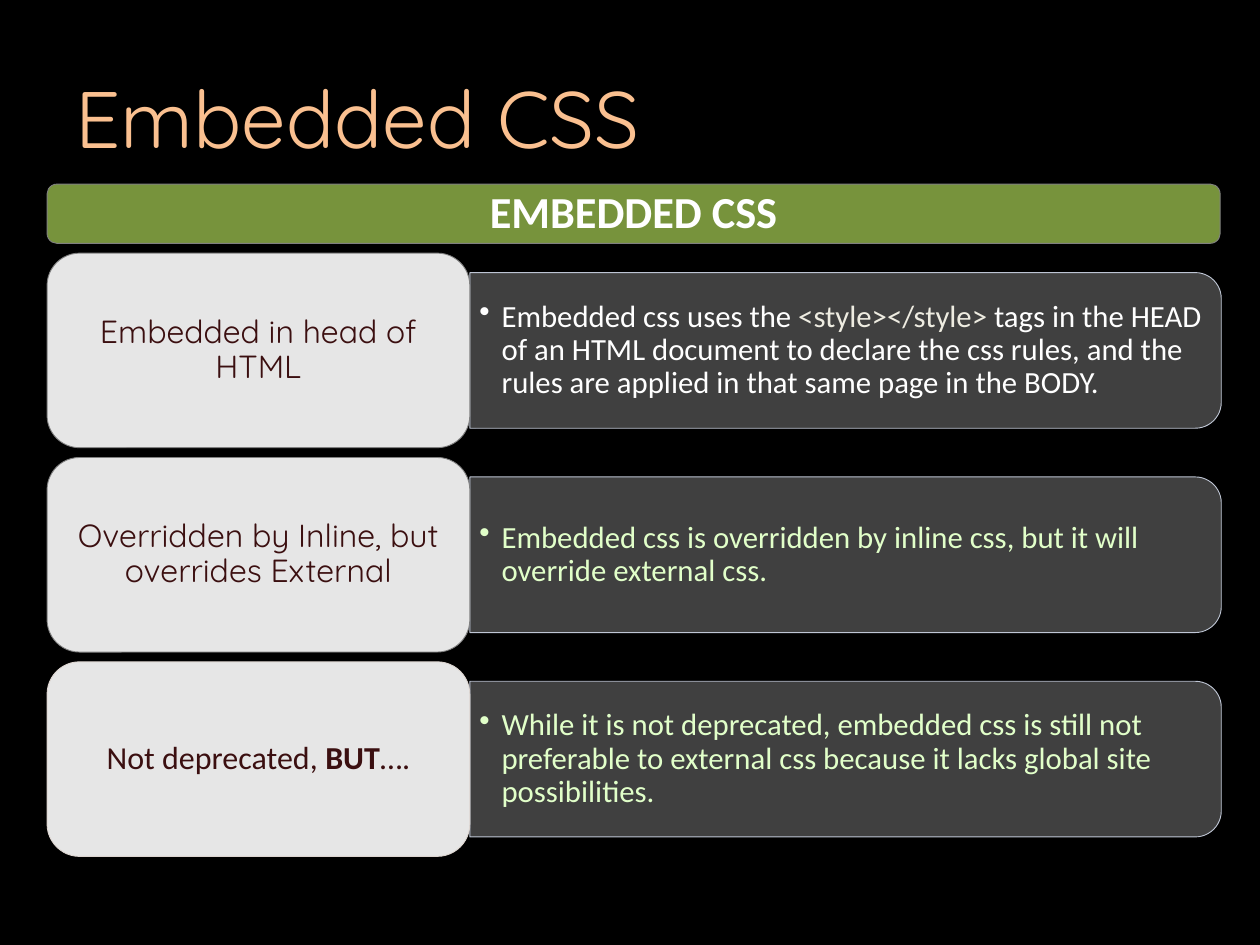
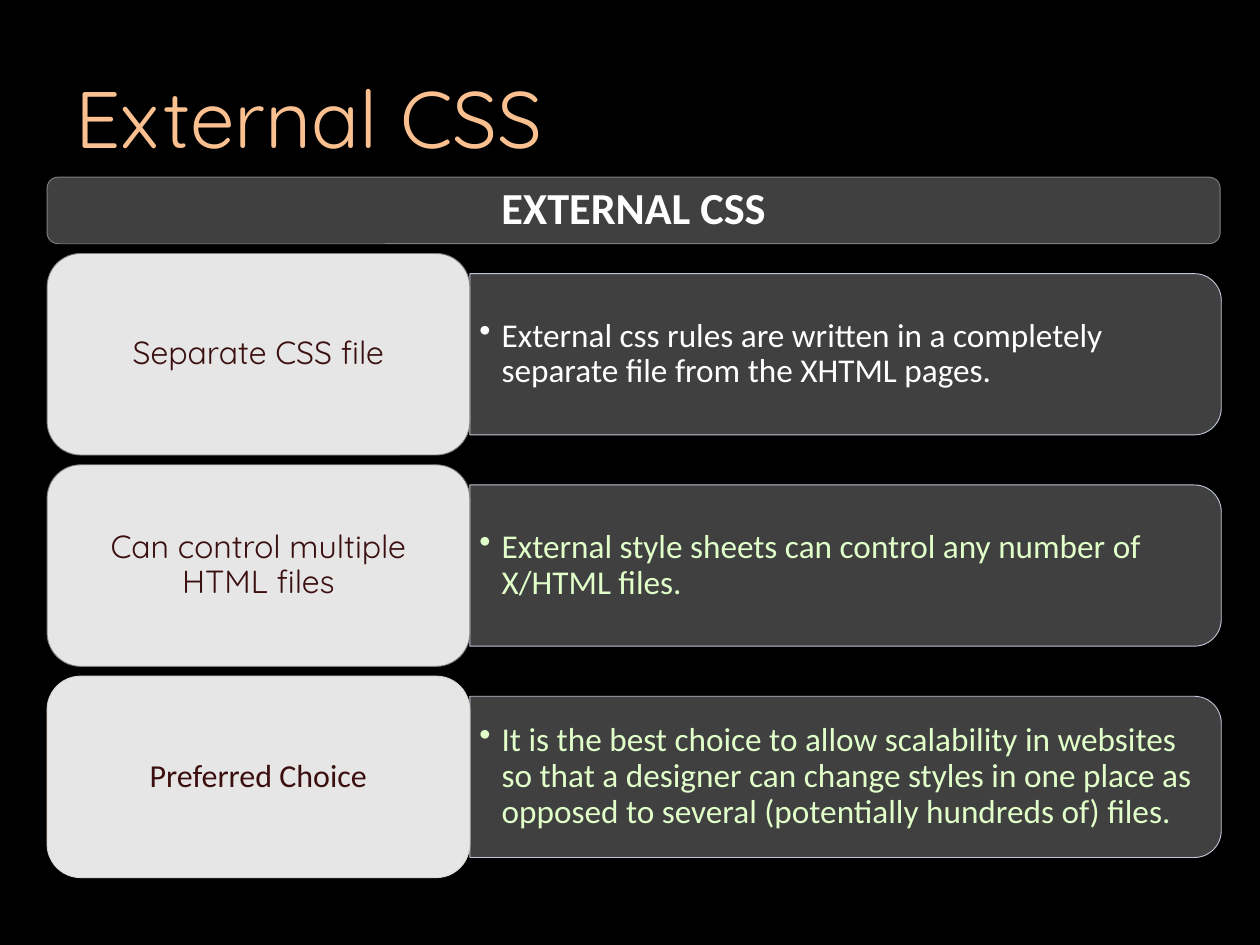
from lxml.etree import SubElement
from pptx import Presentation
from pptx.dml.color import RGBColor
from pptx.enum.shapes import MSO_SHAPE
from pptx.enum.text import MSO_ANCHOR, PP_ALIGN
from pptx.oxml.ns import qn
from pptx.util import Cm, Pt

BLACK = RGBColor(0x00, 0x00, 0x00)
WHITE = RGBColor(0xFF, 0xFF, 0xFF)
PEACH = RGBColor(0xFA, 0xC0, 0x90)
OLIVE = RGBColor(0x77, 0x93, 0x3C)
CHARCOAL = RGBColor(0x40, 0x40, 0x40)
SILVER = RGBColor(0xE6, 0xE6, 0xE6)
GREY = RGBColor(0x80, 0x80, 0x80)
WARM_GREY = RGBColor(0xDD, 0xD5, 0xD0)
PALE_BLUE = RGBColor(0xD0, 0xD8, 0xE8)
MAROON = RGBColor(0x3B, 0x0F, 0x10)
CREAM = RGBColor(0xEE, 0xEC, 0xE1)
MINT = RGBColor(0xE1, 0xFF, 0xC9)

HEADING_FONT = "Quicksand"
BODY_FONT = "Calibri"

SLIDES = [
    {
        "title": "Embedded CSS",
        "banner": "EMBEDDED CSS",
        "banner_fill": OLIVE,
        "banner_top": 5.28,
        "banner_height": 1.7,
        "label_height": 5.58,
        "detail_size": 25,
        "rows": [
            (
                [("Embedded in head of HTML", False)],
                [
                    ("Embedded css uses the ", WHITE),
                    ("<style></style> ", CREAM),
                    ("tags in the HEAD of an HTML document to declare the css rules, "
                     "and the rules are applied in that same page in the BODY.", WHITE),
                ],
            ),
            (
                [("Overridden by Inline, but overrides External", False)],
                [("Embedded css is overridden by inline css, "
                  "but it will override external css.", MINT)],
            ),
            (
                [("Not deprecated, ", False), ("BUT", True), ("….", False)],
                [("While it is not deprecated, embedded css is still not preferable "
                  "to external css because it lacks global site possibilities.", MINT)],
            ),
        ],
    },
    {
        "title": "External CSS",
        "banner": "EXTERNAL CSS",
        "banner_fill": CHARCOAL,
        "banner_top": 5.08,
        "banner_height": 1.91,
        "label_height": 5.78,
        "detail_size": 27,
        "rows": [
            (
                [("Separate CSS file", False)],
                [("External css rules are written in a completely separate file "
                  "from the XHTML pages.", WHITE)],
            ),
            (
                [("Can control multiple HTML files", False)],
                [("External style sheets can control any number of X/HTML files.", MINT)],
            ),
            (
                [("Preferred Choice", False)],
                [("It is the best choice to allow scalability in websites so that a "
                  "designer can change styles in one place as opposed to several "
                  "(potentially hundreds of) files.", MINT)],
            ),
        ],
    },
]

LEFT = 1.35
BANNER_WIDTH = 33.63
LABEL_WIDTH = 12.12
DETAIL_WIDTH = 21.54
DETAIL_TEXT_WIDTH = 21.31
DETAIL_SHARE = 0.8
GAP = 0.28
INDENT = Cm(0.64)


def add_box(slide, preset, left, top, width, height, fill, line):
    shape = slide.shapes.add_shape(preset, Cm(left), Cm(top), Cm(width), Cm(height))
    shape.shadow.inherit = False
    shape.fill.solid()
    shape.fill.fore_color.rgb = fill
    shape.line.color.rgb = line
    shape.line.width = Pt(0.75)
    return shape


def format_text(shape, size, font, color, side, edge, align=PP_ALIGN.CENTER):
    frame = shape.text_frame
    frame.word_wrap = True
    frame.vertical_anchor = MSO_ANCHOR.MIDDLE
    frame.margin_left = frame.margin_right = Cm(side)
    frame.margin_top = frame.margin_bottom = Cm(edge)
    paragraph = frame.paragraphs[0]
    paragraph.alignment = align
    paragraph.font.size = Pt(size)
    paragraph.font.name = font
    paragraph.font.color.rgb = color
    return paragraph


def add_run(paragraph, text):
    run = paragraph.add_run()
    run.text = text
    return run


def add_bullet(paragraph):
    properties = paragraph._p.get_or_add_pPr()
    properties.set("marL", str(INDENT))
    properties.set("indent", str(-INDENT))
    bullet = SubElement(properties, qn("a:buChar"))
    bullet.set("char", "•")
    properties.insert_element_before(bullet, "a:tabLst", "a:defRPr", "a:extLst")


def add_banner(slide, content):
    banner = add_box(slide, MSO_SHAPE.ROUNDED_RECTANGLE, LEFT, content["banner_top"],
                     BANNER_WIDTH, content["banner_height"], content["banner_fill"], GREY)
    paragraph = format_text(banner, 36, BODY_FONT, WHITE, 0.38, 0.18)
    paragraph.line_spacing = 0.9
    paragraph.font.bold = True
    add_run(paragraph, content["banner"])


def add_detail(slide, runs, middle, height, size):
    left = LEFT + LABEL_WIDTH
    panel = add_box(slide, MSO_SHAPE.ROUND_2_SAME_RECTANGLE,
                    left + (DETAIL_WIDTH - height) / 2, middle - DETAIL_WIDTH / 2,
                    height, DETAIL_WIDTH, CHARCOAL, PALE_BLUE)
    panel.rotation = 90
    line_color = panel.line._ln.find(".//" + qn("a:srgbClr"))
    SubElement(line_color, qn("a:alpha")).set("val", "90000")

    text_box = slide.shapes.add_textbox(Cm(left), Cm(middle - height / 2),
                                        Cm(DETAIL_TEXT_WIDTH), Cm(height))
    paragraph = format_text(text_box, size, BODY_FONT, WHITE, 0.27, 0.14, PP_ALIGN.LEFT)
    paragraph.line_spacing = 0.9
    add_bullet(paragraph)
    paragraph.font.color.rgb = runs[0][1]
    for text, color in runs:
        add_run(paragraph, text).font.color.rgb = color


def add_label(slide, runs, top, height, is_last):
    label = add_box(slide, MSO_SHAPE.ROUNDED_RECTANGLE, LEFT, top, LABEL_WIDTH, height,
                    SILVER, WARM_GREY if is_last else GREY)
    font = BODY_FONT if is_last else HEADING_FONT
    paragraph = format_text(label, 26, font, MAROON, 0.28, 0.13)
    paragraph.line_spacing = 0.9
    for text, bold in runs:
        add_run(paragraph, text).font.bold = bold


def prepare_template(presentation):
    background = presentation.slide_master.background.fill
    background.solid()
    background.fore_color.rgb = BLACK
    layout = presentation.slide_layouts.get_by_name("Title Only")
    title = layout.placeholders[0]
    title.left, title.top, title.width, title.height = Cm(1.8), Cm(1.09), Cm(32.51), Cm(4.52)
    return layout


def build_slide(presentation, layout, content):
    slide = presentation.slides.add_slide(layout)
    title = slide.shapes.title
    title.text_frame.text = content["title"]
    format_text(title, 65, HEADING_FONT, PEACH, 0.36, 0.18, PP_ALIGN.LEFT)
    add_banner(slide, content)
    height = content["label_height"]
    first_top = content["banner_top"] + content["banner_height"] + GAP
    for index, (label_runs, detail_runs) in enumerate(content["rows"]):
        top = first_top + index * (height + GAP)
        add_detail(slide, detail_runs, top + height / 2, height * DETAIL_SHARE,
                   content["detail_size"])
        add_label(slide, label_runs, top, height, index == len(content["rows"]) - 1)


def main():
    presentation = Presentation()
    presentation.slide_width = Cm(36.12)
    presentation.slide_height = Cm(27.1)
    layout = prepare_template(presentation)
    for content in SLIDES:
        build_slide(presentation, layout, content)
    presentation.save("out.pptx")


if __name__ == "__main__":
    main()
